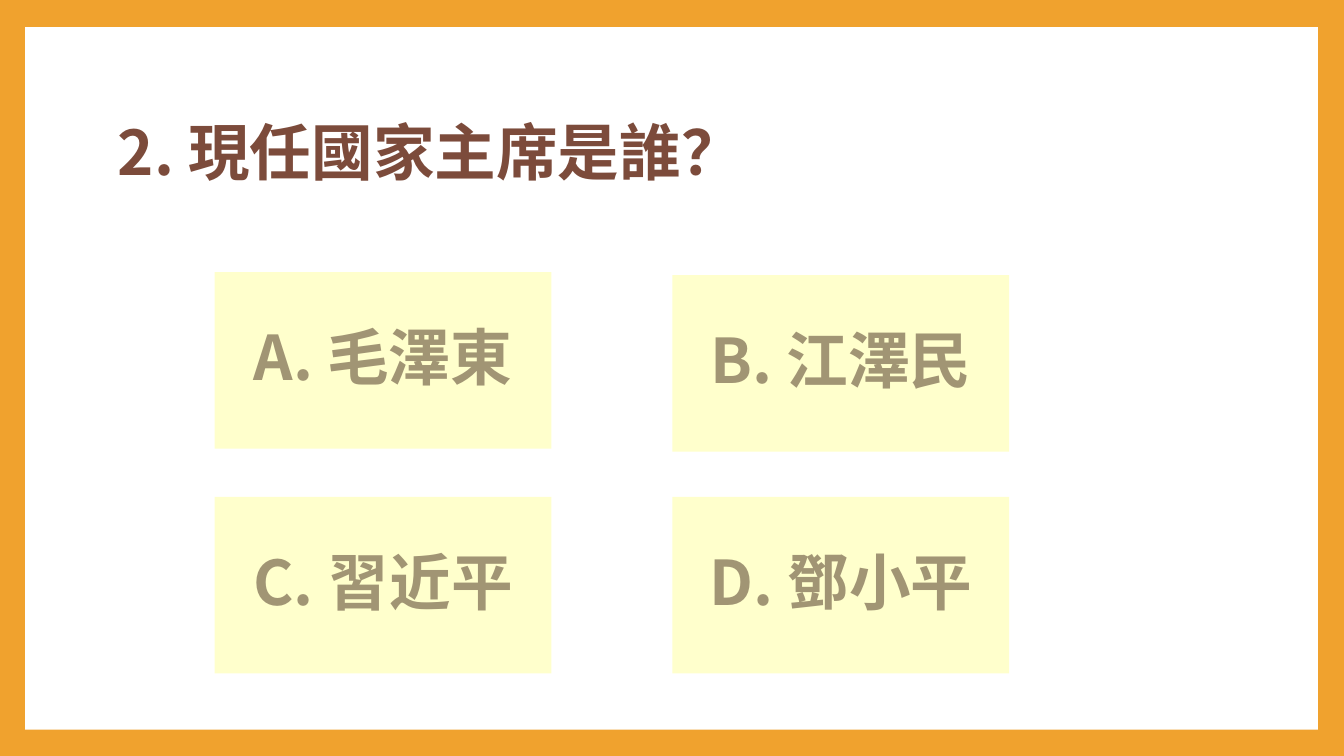
import pptx
import pptx.dml.color
import pptx.enum.shapes
import pptx.enum.text
import pptx.oxml
import pptx.oxml.ns
import pptx.util
from pptx.util import Inches

FONT = "Noto Sans CJK SC"
ANSWERS = ["A. 毛澤東", "B. 江澤民", "C. 習近平", "D. 鄧小平"]
COLUMN_LEFTS = [2.13, 6.67]
ANSWER_TOPS = [2.7, 2.73, 4.93, 4.93]


def color(value):
    return pptx.dml.color.RGBColor.from_string(value)


def write_text(shape, text, font_color, align="LEFT", before=0):
    frame = shape.text_frame
    frame.word_wrap = True
    frame.vertical_anchor = pptx.enum.text.MSO_ANCHOR.MIDDLE
    para = frame.paragraphs[0]
    para.alignment = getattr(pptx.enum.text.PP_ALIGN, align)
    para.line_spacing = 0.9
    para.space_before = pptx.util.Pt(before)
    span = para.add_run()
    span.text = text
    span.font.name = FONT
    span.font.size = pptx.util.Pt(44)
    span.font.bold = True
    span.font.color.rgb = color(font_color)
    # The East Asian typeface has no public setter
    east_asian = pptx.oxml.parse_xml(
        f'<a:ea {pptx.oxml.ns.nsdecls("a")} typeface="{FONT}"/>')
    span.font._element.append(east_asian)


def add_panel(page, left, top, width, height, fill):
    panel = page.shapes.add_shape(
        pptx.enum.shapes.MSO_SHAPE.RECTANGLE,
        Inches(left), Inches(top), Inches(width), Inches(height))
    panel.shadow.inherit = False
    panel.fill.solid()
    panel.fill.fore_color.rgb = color(fill)
    panel.line.fill.background()
    return panel


def add_question(page, text):
    box = page.shapes.add_textbox(
        Inches(1.07), Inches(0.72), Inches(11.37), Inches(1.65))
    write_text(box, text, "7C4B3B")


def add_answer(page, text, left, top):
    panel = add_panel(page, left, top, 3.34, 1.75, "FFFFCC")
    write_text(panel, text, "A19574", align="CENTER", before=14)


def main():
    deck = pptx.Presentation()
    deck.slide_width = Inches(13.33)
    deck.slide_height = Inches(7.5)
    page = deck.slides.add_slide(deck.slide_layouts[6])

    # Orange frame around a white panel
    page.background.fill.solid()
    page.background.fill.fore_color.rgb = color("F0A22E")
    add_panel(page, 0.25, 0.27, 12.82, 6.97, "FFFFFF")

    # Question and its answers in two columns
    add_question(page, "2. 現任國家主席是誰？")
    for index, (answer, top) in enumerate(zip(ANSWERS, ANSWER_TOPS)):
        add_answer(page, answer, COLUMN_LEFTS[index % 2], top)

    deck.save("out.pptx")


if __name__ == "__main__":
    main()
